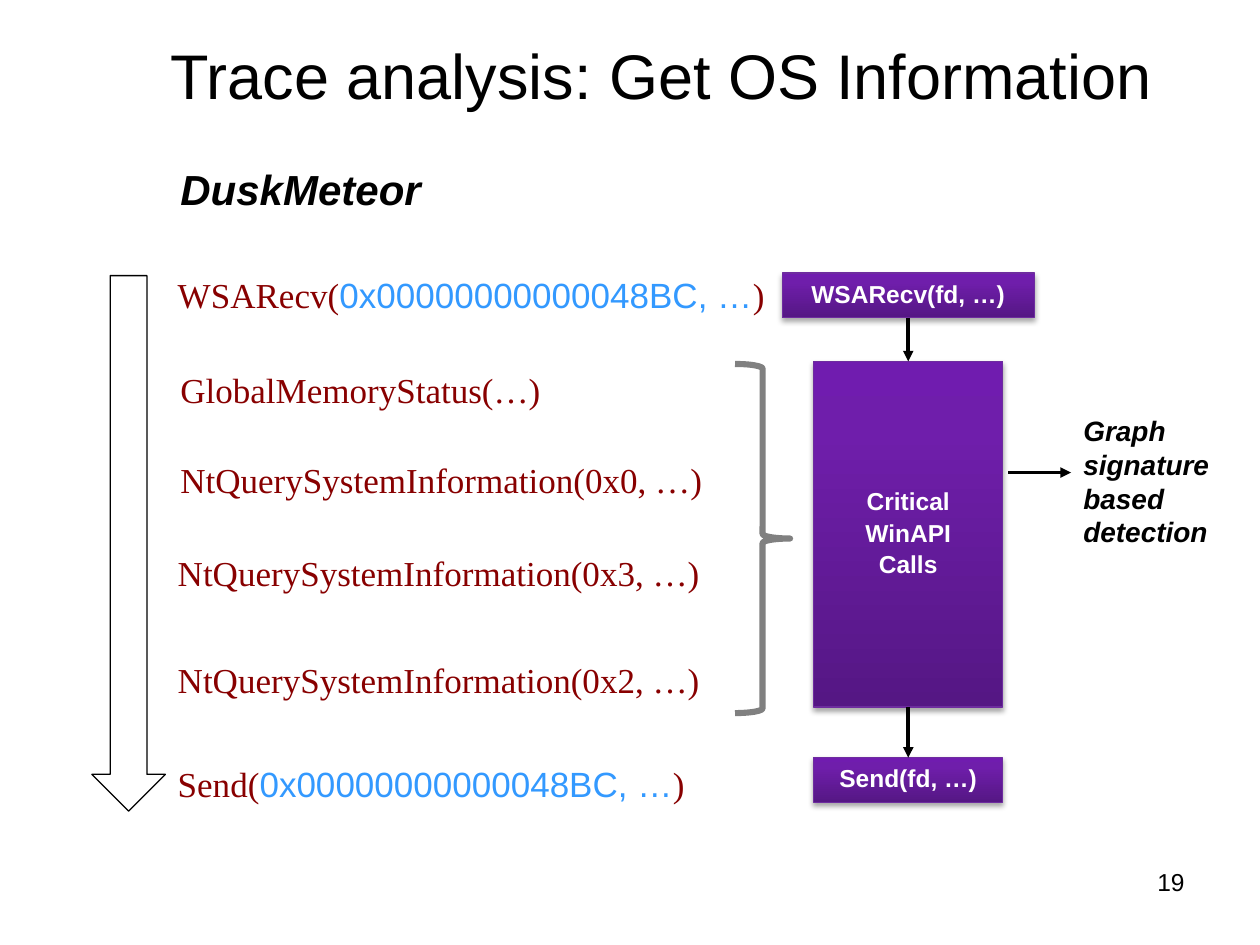
from lxml import etree
from pptx import Presentation
from pptx.dml.color import RGBColor
from pptx.enum import shapes, text
from pptx.oxml import ns, parse_xml
from pptx.util import Pt

COLORS = {
    "black": "000000", "white": "FFFFFF", "call": "880000", "handle": "3399FF",
    "brace": "808080", "box_line": "6E2C9F",
}
BOX_GRADIENT = [(0, "551784"), (80, "6F1EAB"), (100, "701CAF")]
HANDLE = "0x00000000000048BC, …"
CALLS = [
    (0, 0, ["WSARecv(", HANDLE, ")"]),
    (1.5, 54.5, ["GlobalMemoryStatus(…)"]),
    (1.5, 106, ["NtQuerySystemInformation(0x0, …)"]),
    (0, 159, ["NtQuerySystemInformation(0x3, …)"]),
    (0, 220, ["NtQuerySystemInformation(0x2, …)"]),
    (0, 279.5, ["Send(", HANDLE, ")"]),
]


def color(name):
    """Return the named colour as an RGB value."""
    return RGBColor.from_string(COLORS[name])


def write(frame, lines, size=14, fill="black", font="Arial", bold=False, italic=False,
          align=text.PP_ALIGN.LEFT, anchor=text.MSO_ANCHOR.TOP, wrap=True,
          spacing=None, before=0):
    """Fill a text frame with lines, each a string or a list of runs."""
    frame.word_wrap = wrap
    frame.vertical_anchor = anchor
    for index, line in enumerate(lines):
        paragraph = frame.add_paragraph() if index else frame.paragraphs[0]
        paragraph.alignment = align
        if spacing:
            paragraph.line_spacing = spacing
        if index and before:
            paragraph.space_before = Pt(before)
        for part in [line] if isinstance(line, str) else line:
            run = paragraph.add_run()
            run.text = part
            is_handle = part == HANDLE
            run.font.name = "Arial" if is_handle else font
            run.font.size = Pt(size)
            run.font.bold, run.font.italic = bold, italic
            run.font.color.rgb = color("handle" if is_handle else fill)


def add_text(slide, box, lines, **style):
    """Add a text box at left, top, width and height."""
    write(slide.shapes.add_textbox(*map(Pt, box)).text_frame, lines, **style)


def add_outline(slide, kind, box, line, width):
    """Add an unfilled preset shape."""
    shape = slide.shapes.add_shape(kind, *map(Pt, box))
    shape.shadow.inherit = False
    shape.fill.background()
    shape.line.color.rgb = color(line)
    shape.line.width = Pt(width)
    return shape


def add_process(slide, box, lines):
    """Add a shaded process box with centred text."""
    shape = add_outline(slide, shapes.MSO_SHAPE.FLOWCHART_PROCESS, box, "box_line", 0.75)
    shape.fill.gradient()
    shape.fill.gradient_angle = 90
    properties = shape._element.spPr
    stops = properties.find(".//" + ns.qn("a:gsLst"))
    for stop in list(stops):
        stops.remove(stop)
    for position, value in BOX_GRADIENT:
        stop = etree.SubElement(stops, ns.qn("a:gs"), pos=str(position * 1000))
        etree.SubElement(stop, ns.qn("a:srgbClr"), val=value)
    properties.find(ns.qn("a:effectLst")).append(parse_xml(
        f'<a:outerShdw {ns.nsdecls("a")} blurRad="{Pt(3.1)}" dist="{Pt(1.8)}" '
        f'dir="5400000" rotWithShape="0"><a:srgbClr val="{COLORS["black"]}">'
        '<a:alpha val="35000"/></a:srgbClr></a:outerShdw>'))
    write(shape.text_frame, lines, fill="white", bold=True, spacing=0.9, before=2.8,
          align=text.PP_ALIGN.CENTER, anchor=text.MSO_ANCHOR.MIDDLE)
    return shape


def add_arrow(slide, start=(0, 0), end=(0, 0), source=None, target=None):
    """Add an arrow between points, or from one box down to the next."""
    connector = slide.shapes.add_connector(
        shapes.MSO_CONNECTOR.STRAIGHT, *map(Pt, (*start, *end)))
    if source is not None:
        connector.begin_connect(source, 2)
        connector.end_connect(target, 0)
    connector.line.color.rgb = color("black")
    connector.line.width = Pt(2)
    etree.SubElement(connector.line._get_or_add_ln(), ns.qn("a:tailEnd"), type="triangle")
    etree.SubElement(connector._element.spPr, ns.qn("a:effectLst"))


def add_headings(slide, left, top, width):
    """Place the title and the sample name."""
    add_text(slide, (left, top, width, 90), ["Trace analysis: Get OS Information"],
             size=36, spacing=0.9, align=text.PP_ALIGN.CENTER,
             anchor=text.MSO_ANCHOR.MIDDLE)
    add_text(slide, (left + 42, top + 90, 546, 36), ["DuskMeteor"],
             size=24, bold=True, italic=True)


def add_trace(slide, left, top):
    """Place the time arrow, the call list and its brace."""
    add_outline(slide, shapes.MSO_SHAPE.DOWN_ARROW, (left, top + 5, 42, 306), "black", 0.75)
    for indent, offset, runs in CALLS:
        add_text(slide, (left + 42 + indent, top + offset, 352, 31.5), [runs],
                 size=20, fill="call", font="Times New Roman", wrap=False)
    add_outline(slide, shapes.MSO_SHAPE.RIGHT_BRACE,
                (left + 367.5, top + 55.5, 31.5, 199.5), "brace", 3.5)


def add_graph(slide, left, top):
    """Place the call graph and its detection label."""
    receive = add_process(slide, (left, top, 144, 25.5), ["WSARecv(fd, …)"])
    critical = add_process(slide, (left + 18, top + 50.5, 108, 197.5),
                           ["Critical", "WinAPI", "Calls"])
    send = add_process(slide, (left + 18, top + 277, 108, 25.5), ["Send(fd, …)"])
    add_arrow(slide, source=receive, target=critical)
    add_arrow(slide, source=critical, target=send)
    add_arrow(slide, (left + 129, top + 114), (left + 165, top + 114))
    add_text(slide, (left + 165, top + 77, 90, 85),
             ["Graph", "signature", "based", "detection"],
             size=16, bold=True, italic=True)


def main():
    """Build and save the presentation."""
    presentation = Presentation()
    presentation.slide_width, presentation.slide_height = Pt(720), Pt(540)
    slide = presentation.slides.add_slide(presentation.slide_layouts[6])
    add_headings(slide, 54, 0, 648)
    add_trace(slide, 52.5, 152.5)
    add_graph(slide, 447, 156)
    add_text(slide, (516, 492, 168, 37.5), ["19"], align=text.PP_ALIGN.RIGHT)
    presentation.save("out.pptx")


if __name__ == "__main__":
    main()
